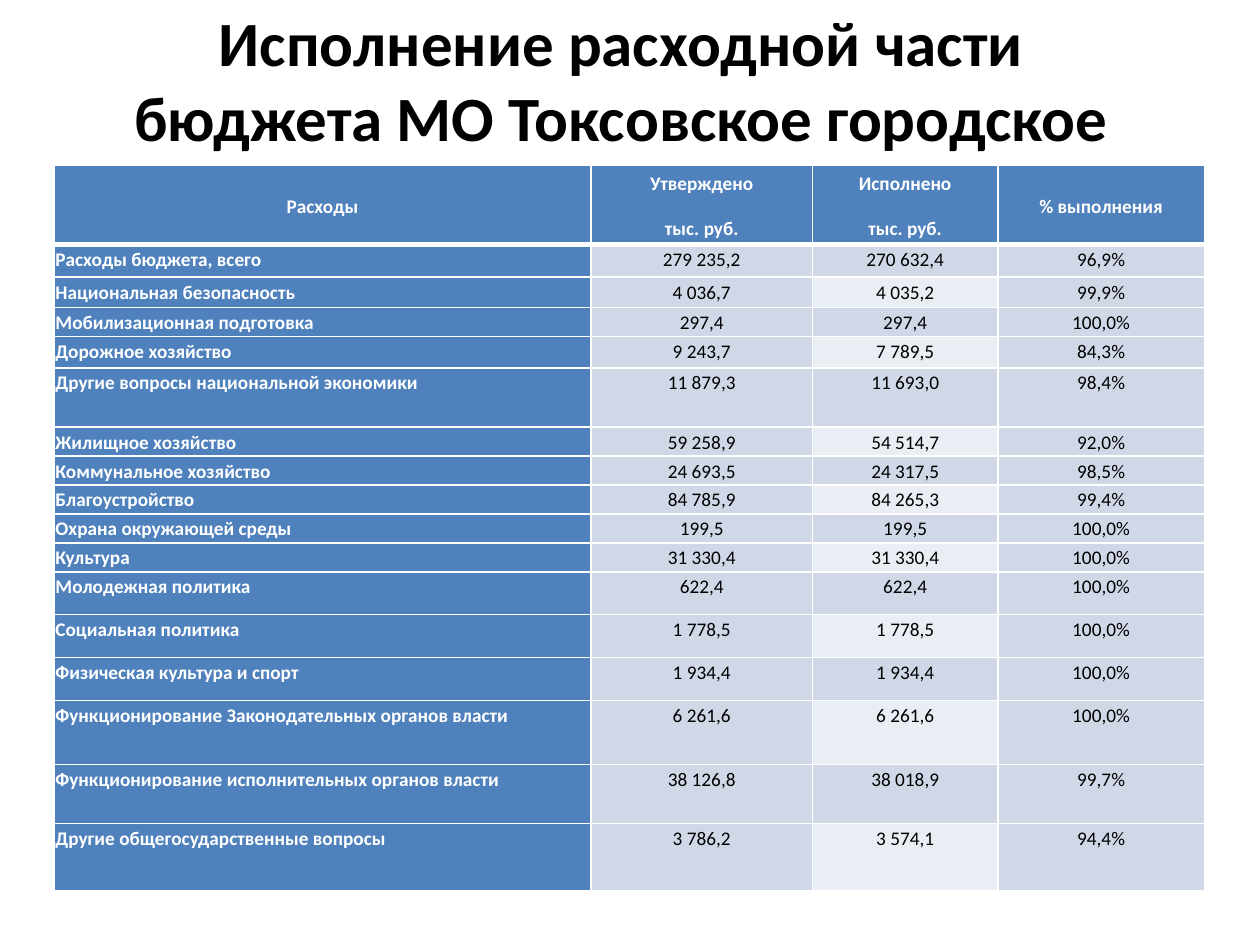
from pptx import Presentation
from pptx.dml.color import RGBColor
from pptx.enum.text import MSO_ANCHOR, PP_ALIGN
from pptx.oxml import parse_xml
from pptx.oxml.ns import nsdecls
from pptx.util import Inches, Pt

BLACK = RGBColor(0x00, 0x00, 0x00)
WHITE = RGBColor(0xFF, 0xFF, 0xFF)
BLUE = RGBColor(0x4F, 0x81, 0xBD)
BAND = RGBColor(0xD0, 0xD8, 0xE8)
LIGHT_BAND = RGBColor(0xE9, 0xED, 0xF4)

TITLE = "Исполнение расходной части\vбюджета МО Токсовское городское"
HEADER = ("Расходы", "Утверждено\nтыс. руб.", "Исполнено\nтыс. руб.", "% выполнения")
HEADER_HEIGHT = 0.63
COLUMN_WIDTHS = (4.26, 1.76, 1.47, 1.64)
EXPENSES = (
    (0.26, "Расходы бюджета, всего", "279 235,2", "270 632,4", "96,9%"),
    (0.24, "Национальная безопасность", "4 036,7", "4 035,2", "99,9%"),
    (0.23, "Мобилизационная подготовка", "297,4", "297,4", "100,0%"),
    (0.25, "Дорожное хозяйство", "9 243,7", "7 789,5", "84,3%"),
    (0.47, "Другие вопросы национальной экономики", "11 879,3", "11 693,0", "98,4%"),
    (0.23, "Жилищное хозяйство", "59 258,9", "54 514,7", "92,0%"),
    (0.23, "Коммунальное хозяйство", "24 693,5", "24 317,5", "98,5%"),
    (0.23, "Благоустройство", "84 785,9", "84 265,3", "99,4%"),
    (0.23, "Охрана окружающей среды", "199,5", "199,5", "100,0%"),
    (0.23, "Культура", "31 330,4", "31 330,4", "100,0%"),
    (0.34, "Молодежная политика", "622,4", "622,4", "100,0%"),
    (0.34, "Социальная политика", "1 778,5", "1 778,5", "100,0%"),
    (0.34, "Физическая культура и спорт", "1 934,4", "1 934,4", "100,0%"),
    (0.51, "Функционирование Законодательных органов власти", "6 261,6", "6 261,6", "100,0%"),
    (0.47, "Функционирование исполнительных органов власти", "38 126,8", "38 018,9", "99,7%"),
    (0.53, "Другие общегосударственные вопросы", "3 786,2", "3 574,1", "94,4%"),
)


class SlideBuilder:
    font_name = "Calibri"
    title_size = Pt(36)
    table_size = Pt(11)

    def __init__(self, slide):
        self.slide = slide

    def style_font(self, font, size, color, bold):
        font.name = self.font_name
        font.size = size
        font.color.rgb = color
        font.bold = bold

    def add_title(self, text, left, top, width, height):
        title = self.slide.shapes.title
        title.left, title.top = Inches(left), Inches(top)
        title.width, title.height = Inches(width), Inches(height)
        frame = title.text_frame
        frame.text = text
        frame.word_wrap = True
        frame.vertical_anchor = MSO_ANCHOR.MIDDLE
        frame.margin_top, frame.margin_bottom = 0, Inches(0.42)
        paragraph = frame.paragraphs[0]
        paragraph.alignment = PP_ALIGN.CENTER
        for span in paragraph.runs:
            self.style_font(span.font, self.title_size, BLACK, True)

    def add_borders(self, cell, bottom):
        properties = cell._tc.get_or_add_tcPr()
        for side, width in (("L", 1), ("R", 1), ("T", 1), ("B", bottom)):
            properties.append(parse_xml(
                f'<a:ln{side} {nsdecls("a")} w="{Pt(width)}"><a:solidFill>'
                f'<a:srgbClr val="{WHITE}"/></a:solidFill></a:ln{side}>'
            ))

    def fill_cell(self, cell, text, row, column):
        is_header = row == 0
        is_label = is_header or column == 0
        self.add_borders(cell, 3 if is_header else 1)
        cell.fill.solid()
        if is_label:
            cell.fill.fore_color.rgb = BLUE
        else:
            is_light = column == 2 and row % 2 == 0
            cell.fill.fore_color.rgb = LIGHT_BAND if is_light else BAND
        cell.margin_left = cell.margin_right = Inches(0.01)
        cell.margin_top = cell.margin_bottom = 0
        cell.vertical_anchor = MSO_ANCHOR.MIDDLE if is_header else MSO_ANCHOR.TOP
        cell.text_frame.text = text
        for paragraph in cell.text_frame.paragraphs:
            centered = is_header or column > 0
            paragraph.alignment = PP_ALIGN.CENTER if centered else PP_ALIGN.LEFT
            paragraph.line_spacing = 1.15
            paragraph.space_after = Pt(10)
            for span in paragraph.runs:
                self.style_font(span.font, self.table_size,
                                WHITE if is_label else BLACK, is_label)

    def add_table(self, rows, row_heights, column_widths, left, top):
        table = self.slide.shapes.add_table(
            len(rows), len(column_widths), Inches(left), Inches(top),
            Inches(sum(column_widths)), Inches(sum(row_heights)),
        ).table
        for column, width in zip(table.columns, column_widths):
            column.width = Inches(width)
        for row, height in zip(table.rows, row_heights):
            row.height = Inches(height)
        for row_index, texts in enumerate(rows):
            for column_index, text in enumerate(texts):
                self.fill_cell(table.cell(row_index, column_index), text,
                               row_index, column_index)


def main():
    deck = Presentation()
    deck.slide_width, deck.slide_height = Inches(10), Inches(7.5)
    builder = SlideBuilder(deck.slides.add_slide(deck.slide_layouts[5]))
    builder.add_title(TITLE, 0.43, 0.21, 9, 1.25)
    rows = [HEADER] + [expense[1:] for expense in EXPENSES]
    heights = [HEADER_HEIGHT] + [expense[0] for expense in EXPENSES]
    builder.add_table(rows, heights, COLUMN_WIDTHS, 0.43, 1.31)
    deck.save("out.pptx")


if __name__ == "__main__":
    main()
